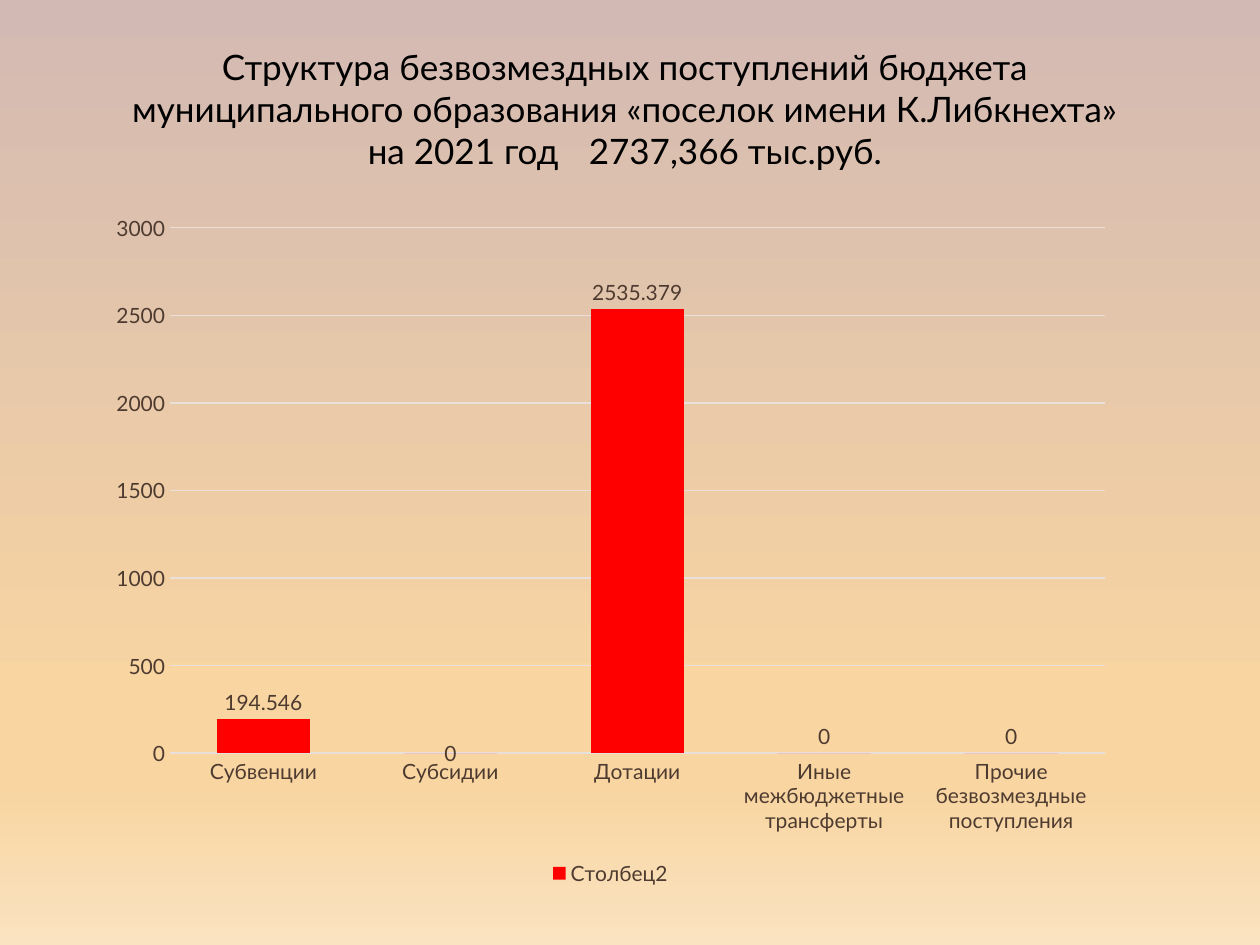
from lxml import etree
from pptx import Presentation
from pptx.chart.data import CategoryChartData
from pptx.dml.color import RGBColor
from pptx.enum.chart import XL_CHART_TYPE as ChartType
from pptx.enum.chart import XL_LABEL_POSITION as LabelPosition
from pptx.enum.chart import XL_LEGEND_POSITION as LegendPosition
from pptx.enum.chart import XL_TICK_MARK as TickMark
from pptx.enum.text import PP_ALIGN as Align
from pptx.oxml.ns import qn
from pptx.util import Inches, Pt

FONT = "Lato"
COLORS = {"title": "000000", "label": "4E3B30", "grid": "E9E0DB", "bar": "FF0000"}
BACKDROP = [(0, "D3B9B3"), (74, "F8D5A1"), (83, "F8D5A1"), (100, "FAE3C0")]
REVENUES = {
    "Субвенции": 194.546,
    "Субсидии": 0,
    "Дотации": 2535.379,
    "Иные межбюджетные трансферты": 0,
    "Прочие безвозмездные поступления": 0,
}
TITLE = [
    ["Структура безвозмездных поступлений бюджета муниципального образования "
     "«поселок имени К.Либкнехта»"],
    ["на 2021 год", " ", "2737,366 тыс.руб."],
]


def style_font(font, size, color):
    font.name = FONT
    font.size = Pt(size)
    font.color.rgb = RGBColor.from_string(COLORS[color])


def style_line(line, color):
    line.width = Pt(0.75)
    line.color.rgb = RGBColor.from_string(COLORS[color])


def paint_background(slide):
    fill = slide.background.fill
    fill.gradient()
    fill.gradient_angle = 270
    stops = next(slide.element.iter(qn("a:gsLst")))
    for stop in list(stops):
        stops.remove(stop)
    for percent, color in BACKDROP:
        stop = etree.SubElement(stops, qn("a:gs"), pos=str(percent * 1000))
        etree.SubElement(stop, qn("a:srgbClr"), val=color)


def add_title(slide, left, top, width, height):
    frame = slide.shapes.add_textbox(left, top, width, height).text_frame
    frame.word_wrap = True
    for index, pieces in enumerate(TITLE):
        paragraph = frame.add_paragraph() if index else frame.paragraphs[0]
        paragraph.alignment = Align.CENTER
        for piece in pieces:
            run = paragraph.add_run()
            run.text = piece
            style_font(run.font, 20, "title")
            if piece == " ":
                run.font._element.set("spc", "1200")


def add_revenue_chart(slide, left, top, width, height):
    data = CategoryChartData()
    data.categories = list(REVENUES)
    data.add_series("Столбец2", list(REVENUES.values()))
    chart = slide.shapes.add_chart(
        ChartType.COLUMN_CLUSTERED, left, top, width, height, data).chart
    style_font(chart.font, 10, "title")
    chart.has_title = False

    chart.has_legend = True
    chart.legend.position = LegendPosition.BOTTOM
    chart.legend.include_in_layout = False
    style_font(chart.legend.font, 12, "label")

    for axis in (chart.category_axis, chart.value_axis):
        axis.major_tick_mark = axis.minor_tick_mark = TickMark.NONE
        style_font(axis.tick_labels.font, 12, "label")
    style_line(chart.category_axis.format.line, "grid")
    chart.value_axis.format.line.fill.background()
    style_line(chart.value_axis.major_gridlines.format.line, "grid")

    plot = chart.plots[0]
    plot.gap_width = 100
    plot.overlap = -24
    plot.vary_by_categories = False
    revenues = plot.series[0]
    revenues.format.fill.solid()
    revenues.format.fill.fore_color.rgb = RGBColor.from_string(COLORS["bar"])
    labels = revenues.data_labels
    labels.show_value = True
    labels.position = LabelPosition.OUTSIDE_END
    style_font(labels.font, 12, "label")
    subsidy_label = revenues.points[1].data_label
    style_font(subsidy_label.font, 12, "label")
    subsidy_label.position = LabelPosition.CENTER


def main():
    deck = Presentation()
    deck.slide_width, deck.slide_height = Inches(10), Inches(7.5)
    slide = deck.slides.add_slide(deck.slide_layouts[6])
    paint_background(slide)
    add_revenue_chart(slide, Inches(0.76), Inches(1.6), Inches(8.17), Inches(5.47))
    add_title(slide, Inches(0.7), Inches(0.31), Inches(8.52), Inches(1.11))
    deck.save("out.pptx")


if __name__ == "__main__":
    main()
